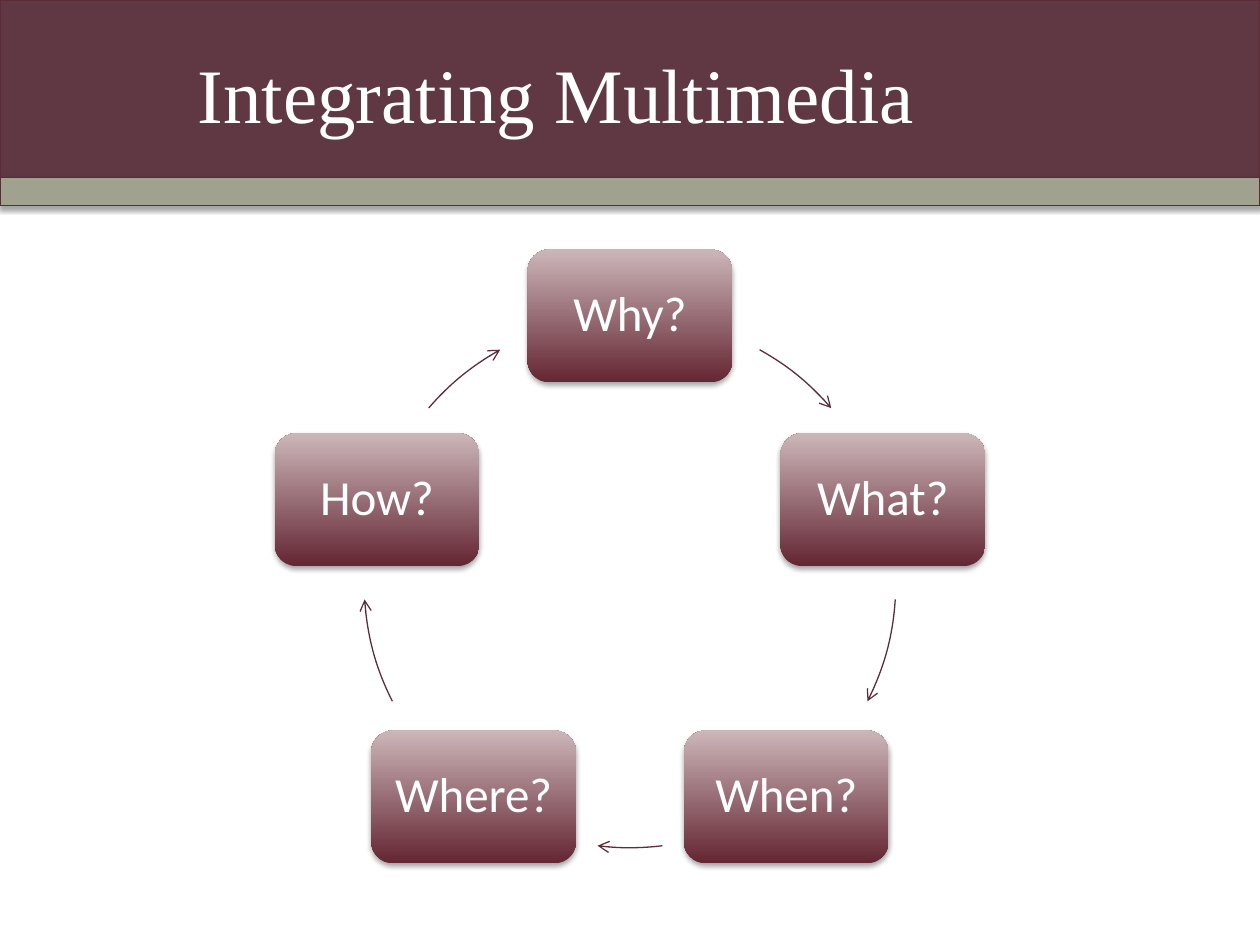
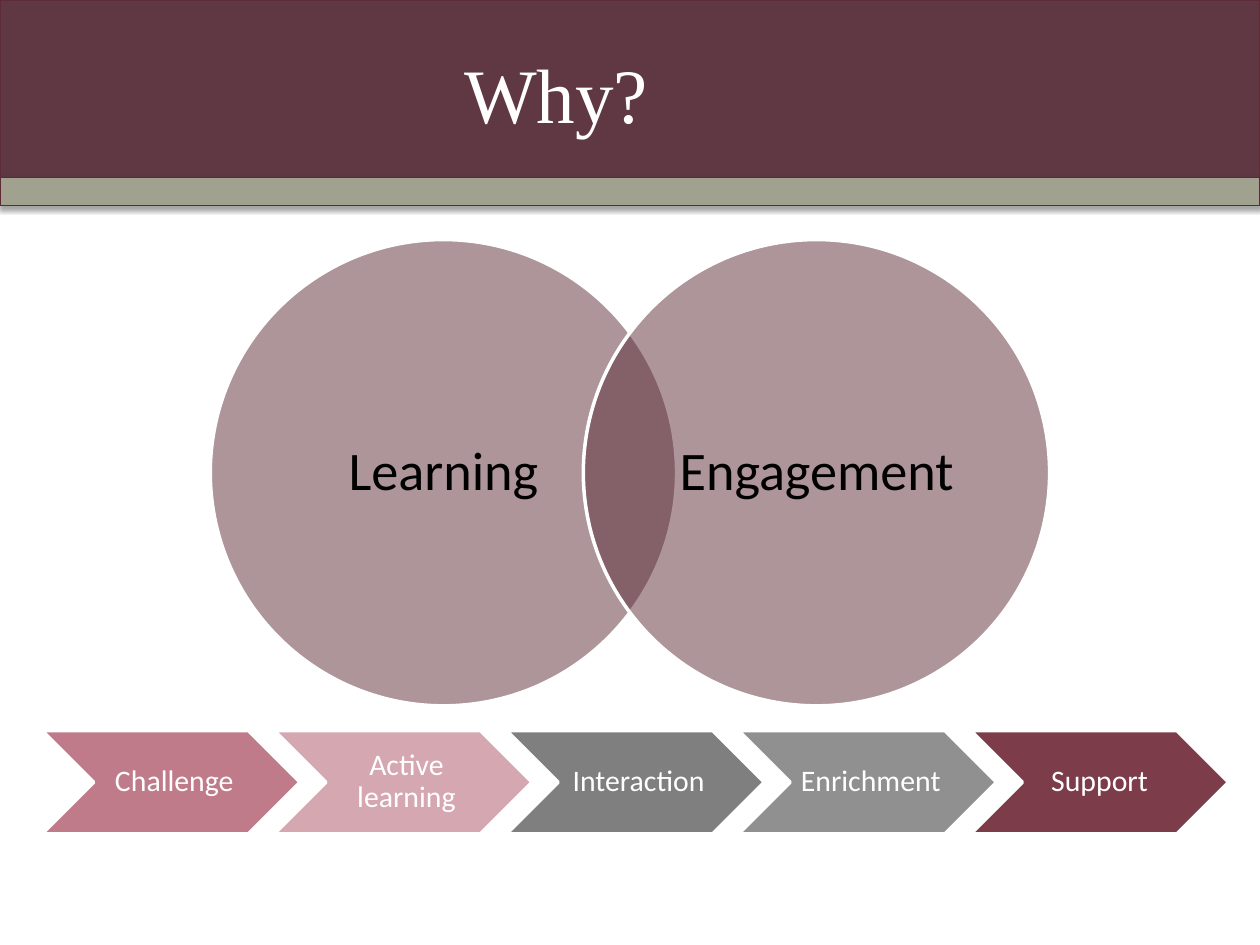
"""Build two slides: a ring of questions and the reasons for multimedia."""
from dataclasses import dataclass
from math import cos, radians, sin

from lxml.etree import SubElement
from pptx import Presentation
from pptx.dml.color import RGBColor
from pptx.enum.shapes import MSO_SHAPE as Kind
from pptx.enum.text import MSO_ANCHOR as Anchor, PP_ALIGN as Align
from pptx.oxml.ns import qn
from pptx.util import Cm, Pt


@dataclass(frozen=True)
class Theme:
    head: str = "Times New Roman"
    body: str = "Calibri"
    white: str = "FFFFFF"
    black: str = "000000"
    band: str = "5F3844"
    stripe: str = "A1A190"
    edge: str = "5C2B35"
    wine: str = "5D2D37"
    dark: str = "642633"
    light: str = "CCB6B9"
    title: int = 44
    node: int = 28
    step: int = 17
    disc: int = 31


LOOK = Theme()
WIDE, HIGH = 25.4, 19.05
TITLES = ["Integrating Multimedia", "Why?"]
BANDS = [(0, 3.86, LOOK.band), (3.58, 0.57, LOOK.stripe)]

ASKS = ["Why?", "What?", "When?", "Where?", "How?"]
ARCS = [(299.2, 319.2), (3.8, 26.7), (83, 97), (153.3, 176.2), (220.8, 240.8)]
HUB = (12.7, 11.73)
REACH = 5.36
NODE = (4.13, 2.68)

DISCS = ["Learning", "Engagement"]
STEPS = [
    ("Challenge", "BF7B89"),
    ("Active learning", "D4A7B1"),
    ("Interaction", "7F7F7F"),
    ("Enrichment", "909090"),
    ("Support ", "7D3C4A"),
]


def tint(code):
    return RGBColor.from_string(code)


def draw(slide, kind, box, fill=None, line=None, width=0.75):
    shape = slide.shapes.add_shape(kind, *map(Cm, box))
    if fill:
        shape.fill.solid()
        shape.fill.fore_color.rgb = tint(fill)
    else:
        shape.fill.background()
    if line:
        shape.line.color.rgb = tint(line)
        shape.line.width = Pt(width)
    else:
        shape.line.fill.background()
    shape.shadow.inherit = False
    return shape


def shade(shape):
    glow = shape._element.spPr.find(qn("a:effectLst"))
    cast = SubElement(glow, qn("a:outerShdw"), blurRad=str(Pt(3.1)),
                      dist=str(Pt(1.8)), dir="5400000", rotWithShape="0")
    ink = SubElement(cast, qn("a:srgbClr"), val=LOOK.black)
    SubElement(ink, qn("a:alpha"), val="35000")


def write(shape, text, size, ink, font=LOOK.body, pads=None, space=None):
    frame = shape.text_frame
    frame.word_wrap = True
    frame.vertical_anchor = Anchor.MIDDLE
    if pads:
        (frame.margin_left, frame.margin_top,
         frame.margin_right, frame.margin_bottom) = map(Cm, pads)
    para = frame.paragraphs[0]
    para.alignment = Align.CENTER
    para.line_spacing = space
    run = para.add_run()
    run.text = text
    run.font.name = font
    run.font.size = Pt(size)
    run.font.color.rgb = tint(ink)


def start(deck, title):
    slide = deck.slides.add_slide(deck.slide_layouts[5])
    for top, tall, fill in BANDS:
        shade(draw(slide, Kind.RECTANGLE, (0, top, WIDE, tall), fill, LOOK.edge))
    head = slide.shapes.title
    head.left, head.top, head.width, head.height = map(Cm, (1.27, 0.28, 19.89, 3.18))
    write(head, title, LOOK.title, LOOK.white, LOOK.head)
    slide.shapes._spTree.append(head._element)
    return slide


def curve(slide, ends):
    box = (HUB[0] - REACH, HUB[1] - REACH, 2 * REACH, 2 * REACH)
    arc = draw(slide, Kind.ARC, box, line=LOOK.wine)
    for i, angle in enumerate(ends):
        arc.adjustments[i] = angle * 0.6
    SubElement(arc.line._get_or_add_ln(), qn("a:tailEnd"), type="arrow")


def ring(slide):
    wide, tall = NODE
    for i, (ask, ends) in enumerate(zip(ASKS, ARCS)):
        turn = radians(i * 360 / len(ASKS) - 90)
        x, y = HUB[0] + REACH * cos(turn), HUB[1] + REACH * sin(turn)
        node = draw(slide, Kind.ROUNDED_RECTANGLE,
                    (x - wide / 2, y - tall / 2, wide, tall))
        node.fill.gradient()
        node.fill.gradient_angle = 90
        for stop, code in zip(node.fill.gradient_stops, (LOOK.dark, LOOK.light)):
            stop.color.rgb = tint(code)
        shade(node)
        write(node, ask, LOOK.node, LOOK.white, pads=(0.3,) * 4, space=0.9)
        curve(slide, ends)


def chain(slide):
    for i, (text, fill) in enumerate(STEPS):
        box = (0.85 + 4.68 * i, 14.73, 5.2, 2.08)
        step = draw(slide, Kind.CHEVRON, box, fill, LOOK.white, 2)
        write(step, text, LOOK.step, LOOK.white,
              pads=(0.18, 0.05, 0.05, 0.05), space=0.9)


def venn(slide):
    for i, text in enumerate(DISCS):
        box = (4.24 + 7.52 * i, 4.83, 9.4, 9.4)
        disc = draw(slide, Kind.OVAL, box, LOOK.wine, LOOK.white, 2)
        ink = disc._element.spPr.find(qn("a:solidFill"))[0]
        SubElement(ink, qn("a:alpha"), val="50000")
        write(disc, text, LOOK.disc, LOOK.black,
              pads=(0.5, 0.1, 0.5, 0.1), space=0.9)


def main():
    deck = Presentation()
    deck.slide_width, deck.slide_height = Cm(WIDE), Cm(HIGH)
    cycle, why = [start(deck, title) for title in TITLES]
    ring(cycle)
    chain(why)
    venn(why)
    deck.save("out.pptx")


if __name__ == "__main__":
    main()
